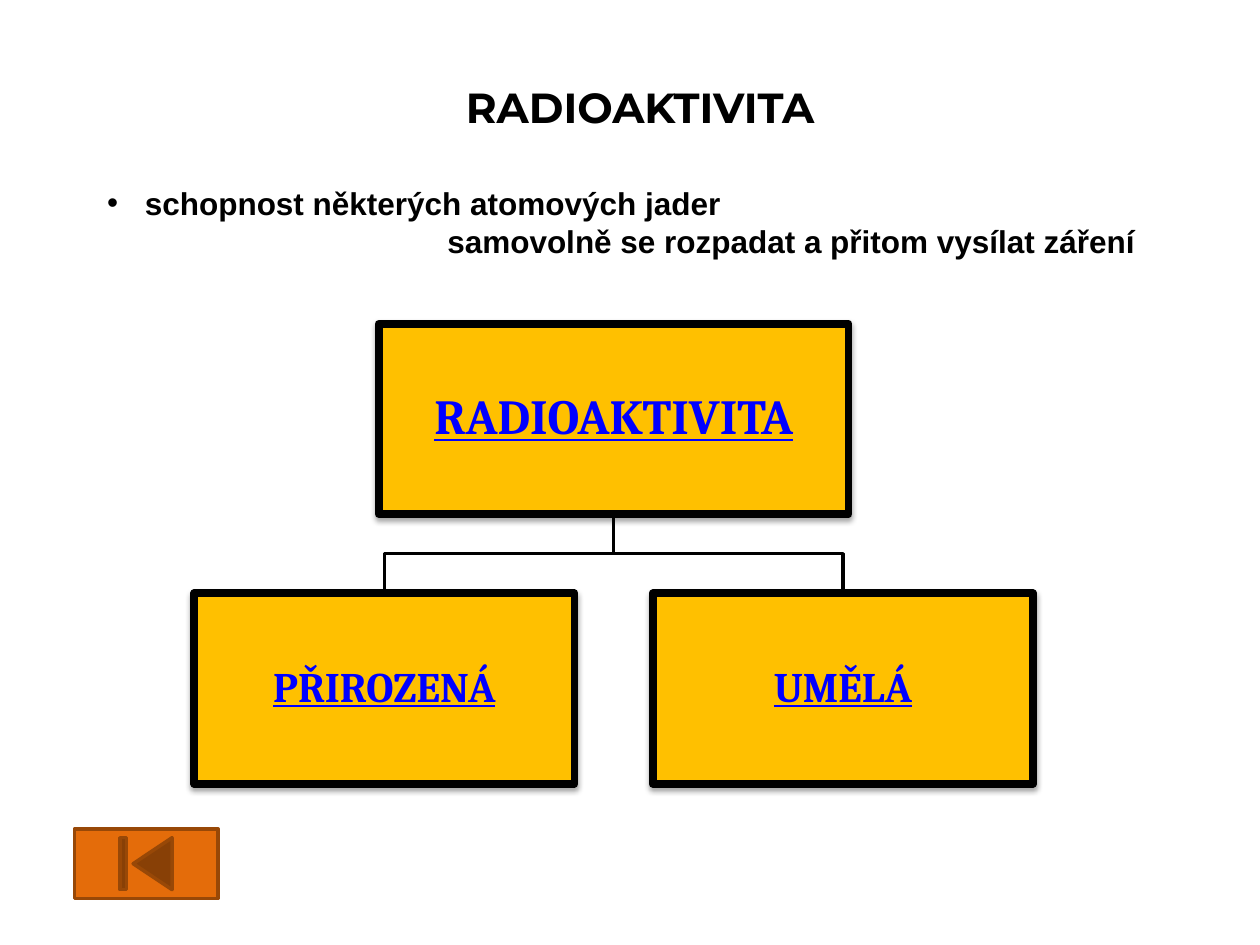
from dataclasses import dataclass

from lxml import etree
from pptx import Presentation
from pptx.dml.color import RGBColor
from pptx.enum.shapes import MSO_SHAPE
from pptx.enum.text import MSO_ANCHOR, MSO_AUTO_SIZE, PP_ALIGN
from pptx.oxml.ns import qn
from pptx.util import Inches, Pt

RECTANGLE = MSO_SHAPE.RECTANGLE
BACK_BUTTON = MSO_SHAPE.ACTION_BUTTON_BEGINNING
TOP, MIDDLE = MSO_ANCHOR.TOP, MSO_ANCHOR.MIDDLE
LEFT, CENTER = PP_ALIGN.LEFT, PP_ALIGN.CENTER
NO_AUTOFIT = MSO_AUTO_SIZE.NONE
TITLE_AND_CONTENT = 1


@dataclass(frozen=True)
class Theme:
    ink: str = "000000"
    link: str = "0000FF"
    box: str = "FFC000"
    button: str = "E46C0A"
    button_edge: str = "984807"
    title_font: str = "Montserrat"
    body_font: str = "Arial"
    box_font: str = "Cambria"
    title_size: float = 24
    body_size: float = 18
    root_size: float = 28
    branch_size: float = 24
    box_edge: float = 4.5
    thin_edge: float = 2


def write(paragraph, text, *, font, size, color, align=LEFT, underline=False, spacing=1.0):
    """Put one bold run with its format into a paragraph."""
    paragraph.alignment = align
    paragraph.line_spacing = spacing
    paragraph.space_before = Pt(0)
    run = paragraph.add_run()
    run.text = text
    run.font.name = font
    run.font.size = Pt(size)
    run.font.bold = True
    run.font.underline = underline
    run.font.color.rgb = RGBColor.from_string(color)


class SlideBuilder:
    """Theme and current slide; lengths are cells of a 100 x 75 grid."""

    COLUMNS, ROWS = 100, 75

    def __init__(self, deck, theme):
        self.theme = theme
        self.slide = deck.slides.add_slide(deck.slide_layouts[TITLE_AND_CONTENT])
        self.column = deck.slide_width / self.COLUMNS
        self.row = deck.slide_height / self.ROWS

    def area(self, left, top, width, height):
        return (round(left * self.column), round(top * self.row),
                round(width * self.column), round(height * self.row))

    def place(self, holder, area, anchor):
        holder.left, holder.top, holder.width, holder.height = self.area(*area)
        frame = holder.text_frame
        frame.auto_size = NO_AUTOFIT
        frame.vertical_anchor = anchor
        return frame

    def title(self, text, area):
        frame = self.place(self.slide.shapes.title, area, MIDDLE)
        write(frame.paragraphs[0], text, font=self.theme.title_font,
              size=self.theme.title_size, color=self.theme.ink, align=CENTER)

    def definition(self, lines, area):
        """Each line is (text, margin in columns, has bullet)."""
        frame = self.place(self.slide.placeholders[1], area, TOP)
        for number, (text, margin, bulleted) in enumerate(lines):
            paragraph = frame.add_paragraph() if number else frame.paragraphs[0]
            write(paragraph, text, font=self.theme.body_font,
                  size=self.theme.body_size, color=self.theme.ink)
            indent = round(margin * self.column)
            properties = paragraph._p.get_or_add_pPr()
            properties.set("marL", str(indent))
            properties.set("indent", str(-indent if bulleted else 0))
            if bulleted:
                etree.SubElement(properties, qn("a:buChar"), char="•")
            else:
                etree.SubElement(properties, qn("a:buNone"))

    def shape(self, kind, area, fill, edge, edge_width):
        shape = self.slide.shapes.add_shape(kind, *self.area(*area))
        shape.shadow.inherit = False
        shape.fill.solid()
        shape.fill.fore_color.rgb = RGBColor.from_string(fill)
        shape.line.color.rgb = RGBColor.from_string(edge)
        shape.line.width = Pt(edge_width)
        return shape

    def box(self, text, area, size):
        theme = self.theme
        box = self.shape(RECTANGLE, area, theme.box, theme.ink, theme.box_edge)
        self.drop_shadow(box)
        frame = box.text_frame
        frame.word_wrap = True
        frame.vertical_anchor = MIDDLE
        frame.margin_left = frame.margin_right = Inches(0.02)
        frame.margin_top = frame.margin_bottom = Inches(0.02)
        write(frame.paragraphs[0], text, font=theme.box_font, size=size,
              color=theme.link, align=CENTER, underline=True, spacing=0.9)

    def drop_shadow(self, shape):
        effects = shape._element.spPr.find(qn("a:effectLst"))
        shadow = etree.SubElement(effects, qn("a:outerShdw"), blurRad=str(Pt(3.1)),
                                  dist=str(Pt(1.8)), dir="5400000", rotWithShape="0")
        color = etree.SubElement(shadow, qn("a:srgbClr"), val=self.theme.ink)
        etree.SubElement(color, qn("a:alpha"), val="35000")

    def branch_line(self, start, end):
        """Open elbow that turns halfway down."""
        (x1, y1), (x2, y2) = start, end
        turn = (y1 + y2) / 2
        corners = [(round(x * self.column), round(y * self.row))
                   for x, y in ((x1, y1), (x1, turn), (x2, turn), (x2, y2))]
        builder = self.slide.shapes.build_freeform(*corners[0])
        builder.add_line_segments(corners[1:], close=False)
        elbow = builder.convert_to_shape()
        elbow.shadow.inherit = False
        elbow.fill.background()
        elbow.line.color.rgb = RGBColor.from_string(self.theme.ink)
        elbow.line.width = Pt(self.theme.thin_edge)

    def back_button(self, area):
        self.shape(BACK_BUTTON, area, self.theme.button,
                   self.theme.button_edge, self.theme.thin_edge)


def main():
    deck = Presentation()
    deck.slide_width, deck.slide_height = Inches(10), Inches(7.5)
    theme = Theme()
    page = SlideBuilder(deck, theme)

    # Heading and definition
    page.title("RADIOAKTIVITA", (7.5, 6, 86.6, 5))
    page.definition([("schopnost některých atomových jader", 3, True),
                     ("samovolně se rozpadat a přitom vysílat záření", 27, False)],
                    (7.5, 14.1, 86.6, 7))

    # Tree: one root centred over evenly spaced branches
    center, root_top, root_width = 48.7, 25.7, 37.3
    box_height, level_gap = 15.1, 6.3
    branch_width, branch_gap = 30.2, 6.2
    branches = ["PŘIROZENÁ", "UMĚLÁ"]
    root_bottom = root_top + box_height
    branch_top = root_bottom + level_gap
    pitch = branch_width + branch_gap
    branch_centers = [center + (i - (len(branches) - 1) / 2) * pitch
                      for i in range(len(branches))]

    for branch_center in branch_centers:
        page.branch_line((center, root_bottom), (branch_center, branch_top))
    page.box("RADIOAKTIVITA", (center - root_width / 2, root_top, root_width, box_height),
             theme.root_size)
    for branch, branch_center in zip(branches, branch_centers):
        page.box(branch, (branch_center - branch_width / 2, branch_top,
                          branch_width, box_height), theme.branch_size)

    # Navigation
    page.back_button((5.9, 65.8, 11.4, 5.5))

    deck.save("out.pptx")


if __name__ == "__main__":
    main()
